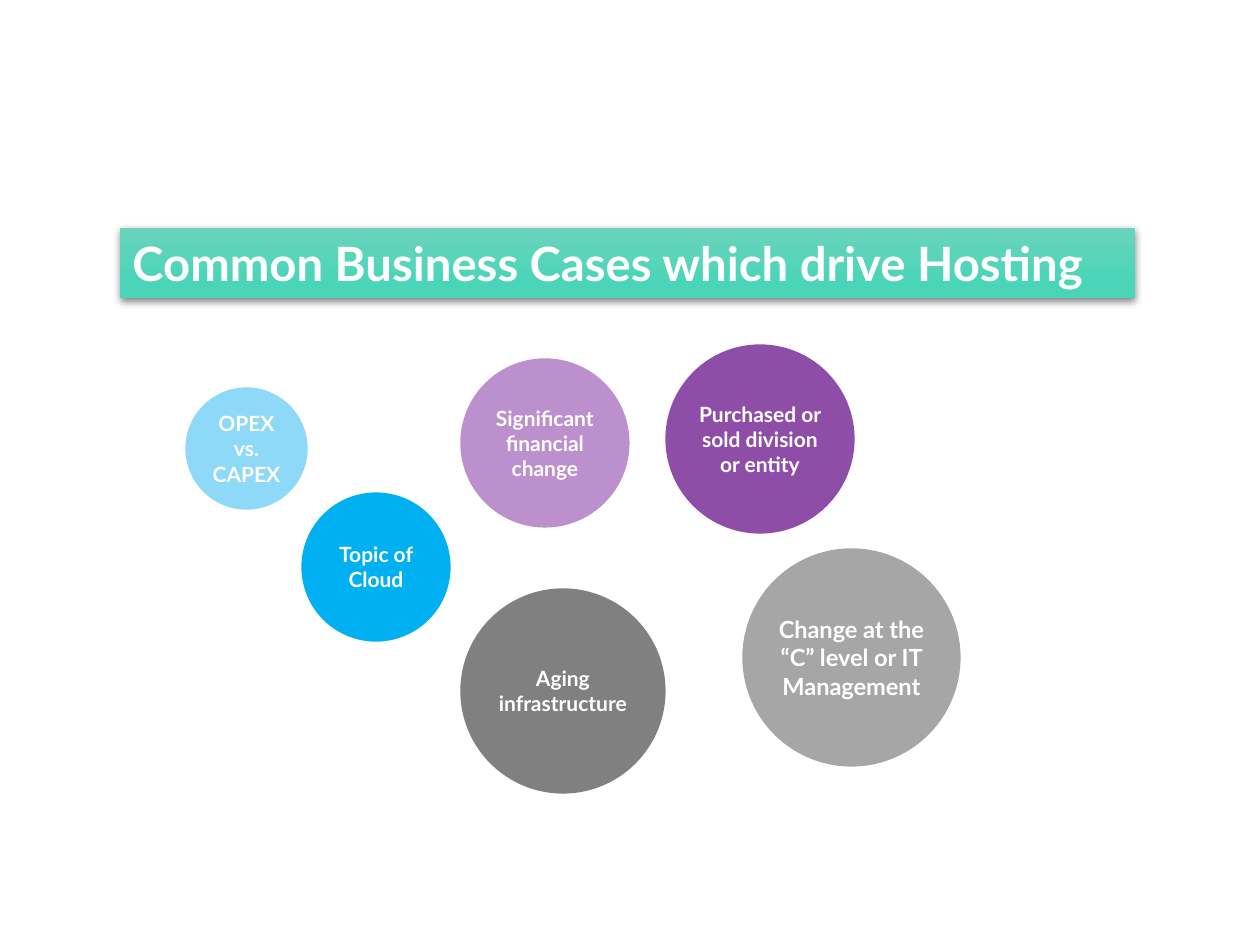
from lxml import etree
from pptx import Presentation
from pptx.dml.color import RGBColor
from pptx.enum.shapes import MSO_SHAPE
from pptx.enum.text import MSO_ANCHOR, MSO_AUTO_SIZE, PP_ALIGN
from pptx.oxml.ns import qn
from pptx.util import Pt

OVAL, RECT = MSO_SHAPE.OVAL, MSO_SHAPE.RECTANGLE
MIDDLE, TOP = MSO_ANCHOR.MIDDLE, MSO_ANCHOR.TOP
CENTER, LEFT = PP_ALIGN.CENTER, PP_ALIGN.LEFT
GROW = MSO_AUTO_SIZE.SHAPE_TO_FIT_TEXT
PX = 914400 / 126
FONT = "Lato"

COLORS = {
    "lilac": "BB90CC", "purple": "8E4EA8", "silver": "A6A6A6",
    "gray": "808080", "sky": "8ED8F8", "blue": "00B0F0",
    "mint": "6AD4BC", "teal": "4AD5B8", "white": "FFFFFF", "black": "000000",
}

TITLE = "Common Business Cases which drive Hosting"
BANNER = (120, 228, 1015, 70)
STOPS = [(0, "mint"), (0.78, "teal")]

# text, left, top, diameter, color, text size
CASES = [
    ("Significant financial change", 463, 361, 164, "lilac", 12),
    ("Purchased or sold division or entity", 668, 347, 184, "purple", 12),
    ("Change at the “C” level or IT Management", 745, 551, 213, "silver", 13.5),
    ("Aging infrastructure", 463, 591, 200, "gray", 12),
    ("OPEX vs. CAPEX", 188, 390, 117, "sky", 12),
    ("Topic of Cloud", 304, 495, 144, "blue", 12),
]


def emu(px):
    return round(px * PX)


def rgb(name):
    return RGBColor.from_string(COLORS[name])


def add_box(slide, kind, box, text, size, align, anchor):
    shape = slide.shapes.add_shape(kind, *map(emu, box))
    shape.shadow.inherit = False
    frame = shape.text_frame
    frame.word_wrap = True
    frame.vertical_anchor = anchor
    para = frame.paragraphs[0]
    para.alignment = align
    run = para.add_run()
    run.text = text
    font = run.font
    font.name, font.size, font.bold = FONT, Pt(size), True
    font.color.rgb = rgb("white")
    return shape


def add_case(slide, text, left, top, side, color, size):
    shape = add_box(slide, OVAL, (left, top, side, side), text, size, CENTER, MIDDLE)
    shape.fill.solid()
    shape.fill.fore_color.rgb = rgb(color)
    shape.line.color.rgb = rgb(color)
    shape.line.width = Pt(3)
    frame = shape.text_frame
    frame.margin_left = frame.margin_right = 0
    frame.margin_top = frame.margin_bottom = emu(5)


def add_shadow(shape):
    effects = shape.element.spPr.find(qn("a:effectLst"))
    outer = etree.SubElement(effects, qn("a:outerShdw"), blurRad=str(Pt(4.5)),
                             dist=str(Pt(1.5)), dir="5400000", rotWithShape="0")
    color = etree.SubElement(outer, qn("a:srgbClr"), val=COLORS["black"])
    etree.SubElement(color, qn("a:alpha"), val="48000")


def add_banner(slide):
    shape = add_box(slide, RECT, BANNER, TITLE, 27, LEFT, TOP)
    shape.text_frame.auto_size = GROW
    shape.line.fill.background()
    shape.fill.gradient()
    shape.fill.gradient_angle = 270
    for stop, (place, color) in zip(shape.fill.gradient_stops, STOPS):
        stop.position = place
        stop.color.rgb = rgb(color)
    add_shadow(shape)


def main():
    deck = Presentation()
    deck.slide_width, deck.slide_height = emu(1260), emu(945)
    slide = deck.slides.add_slide(deck.slide_layouts[6])

    # Business case circles
    for case in CASES:
        add_case(slide, *case)

    # Title banner
    add_banner(slide)
    deck.save("out.pptx")


if __name__ == "__main__":
    main()
